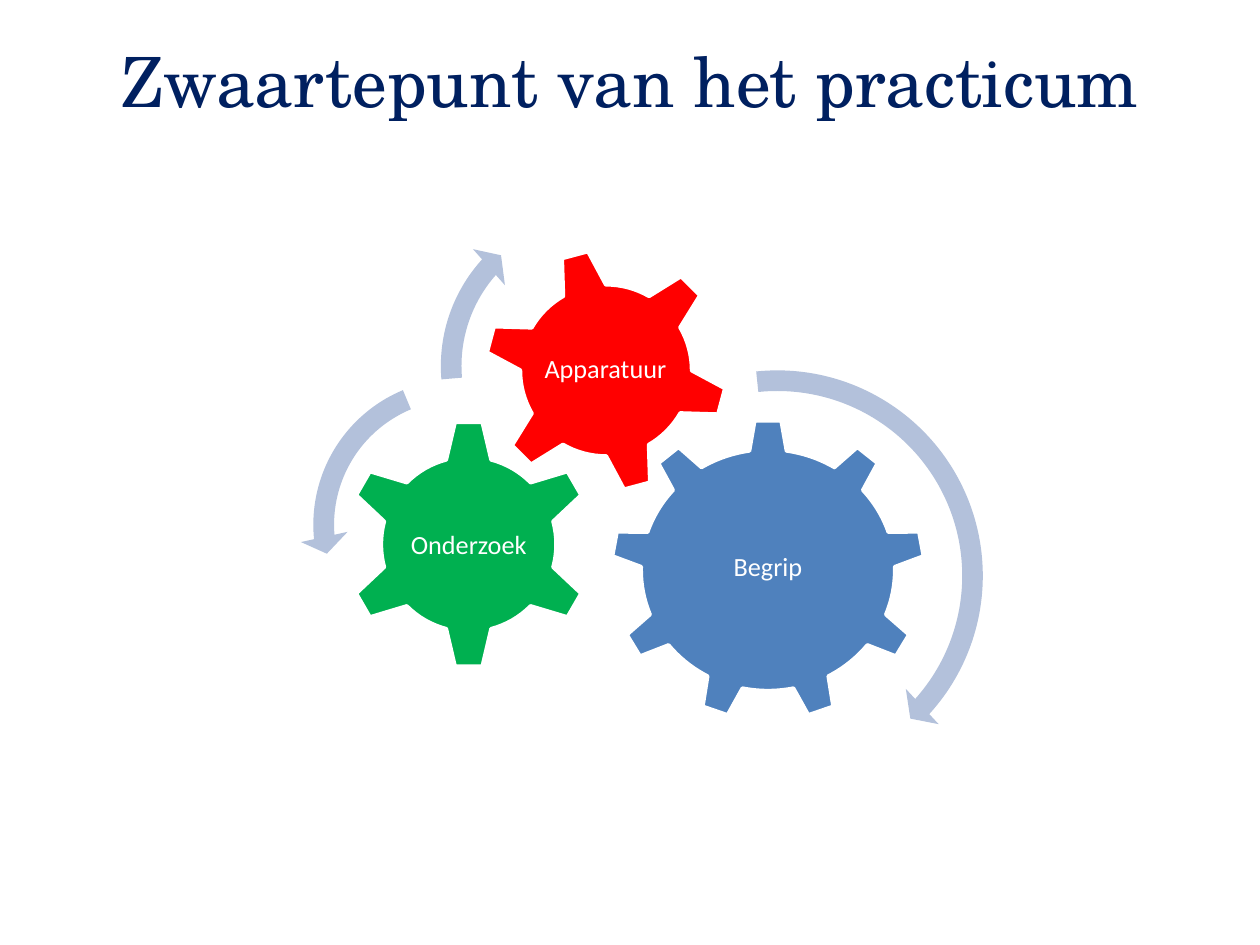
from pptx import Presentation
from pptx.dml.color import RGBColor
from pptx.enum.shapes import MSO_SHAPE
from pptx.enum.text import MSO_ANCHOR, PP_ALIGN
from pptx.util import Inches, Pt

WHITE, NAVY, PALE_BLUE = "FFFFFF", "002060", "B3C1DB"

# gear shape, gear position, rotation, fill, label, label position
GEARS = [
    (MSO_SHAPE.GEAR_9, (4.85, 3.33, 2.49, 2.39), 0, "4F81BD",
     "Begrip", (5.34, 3.89, 1.51, 1.23)),
    (MSO_SHAPE.GEAR_6, (2.73, 3.33, 1.98, 1.98), 0, "00B050",
     "Onderzoek", (3.23, 3.84, 0.98, 0.98)),
    (MSO_SHAPE.GEAR_6, (3.84, 1.97, 1.94, 1.94), 345, "FF0000",
     "Apparatuur", (4.26, 2.39, 1.09, 1.09)),
]

# arrow shape, position, adjustments
ARROWS = [
    (MSO_SHAPE.CIRCULAR_ARROW, (4.43, 2.83, 3.48, 3.48),
     (0.047, 2.99, 25.24, 158.45, 0.055)),
    (MSO_SHAPE.LEFT_CIRCULAR_ARROW, (2.38, 2.9, 2.53, 2.53),
     (0.065, 4.3, 104.89, 148.38, 0.075)),
    (MSO_SHAPE.CIRCULAR_ARROW, (3.39, 1.54, 2.73, 2.73),
     (0.06, 3.94, 133.14, 105.08, 0.07)),
]


def color(value):
    return RGBColor.from_string(value)


def add_text(shapes, position, text, font, size, fill, anchor, inset):
    box = shapes.add_textbox(*map(Inches, position))
    frame = box.text_frame
    frame.word_wrap = True
    frame.vertical_anchor = anchor
    frame.margin_left = frame.margin_right = Inches(inset)
    frame.margin_top = frame.margin_bottom = Inches(inset)
    para = frame.paragraphs[0]
    para.text = text
    para.alignment = PP_ALIGN.CENTER
    para.font.name = font
    para.font.size = Pt(size)
    para.font.color.rgb = color(fill)
    return para


def add_filled(shapes, kind, position, fill):
    shape = shapes.add_shape(kind, *map(Inches, position))
    shape.shadow.inherit = False
    shape.fill.solid()
    shape.fill.fore_color.rgb = color(fill)
    return shape


def add_gear(shapes, kind, position, rotation, fill, label, label_position):
    gear = add_filled(shapes, kind, position, fill)
    gear.rotation = rotation
    gear.line.color.rgb = color(WHITE)
    gear.line.width = Pt(2)
    para = add_text(shapes, label_position, label, "Calibri", 15, WHITE,
                    MSO_ANCHOR.MIDDLE, 0.02)
    para.line_spacing = 0.9


def add_arrow(shapes, kind, position, adjustments):
    arrow = add_filled(shapes, kind, position, PALE_BLUE)
    arrow.line.fill.background()
    for index, value in enumerate(adjustments):
        arrow.adjustments[index] = value


def main():
    deck = Presentation()
    deck.slide_width, deck.slide_height = Inches(10), Inches(7.5)
    page = deck.slides.add_slide(deck.slide_layouts[6])
    add_text(page.shapes, (0.5, 0.3, 9, 1.25), "Zwaartepunt van het practicum",
             "TeX Gyre Schola", 39.6, NAVY, MSO_ANCHOR.TOP, 0)
    diagram = page.shapes.add_group_shape()
    for gear in GEARS:
        add_gear(diagram.shapes, *gear)
    for arrow in ARROWS:
        add_arrow(diagram.shapes, *arrow)
    deck.save("out.pptx")


if __name__ == "__main__":
    main()
